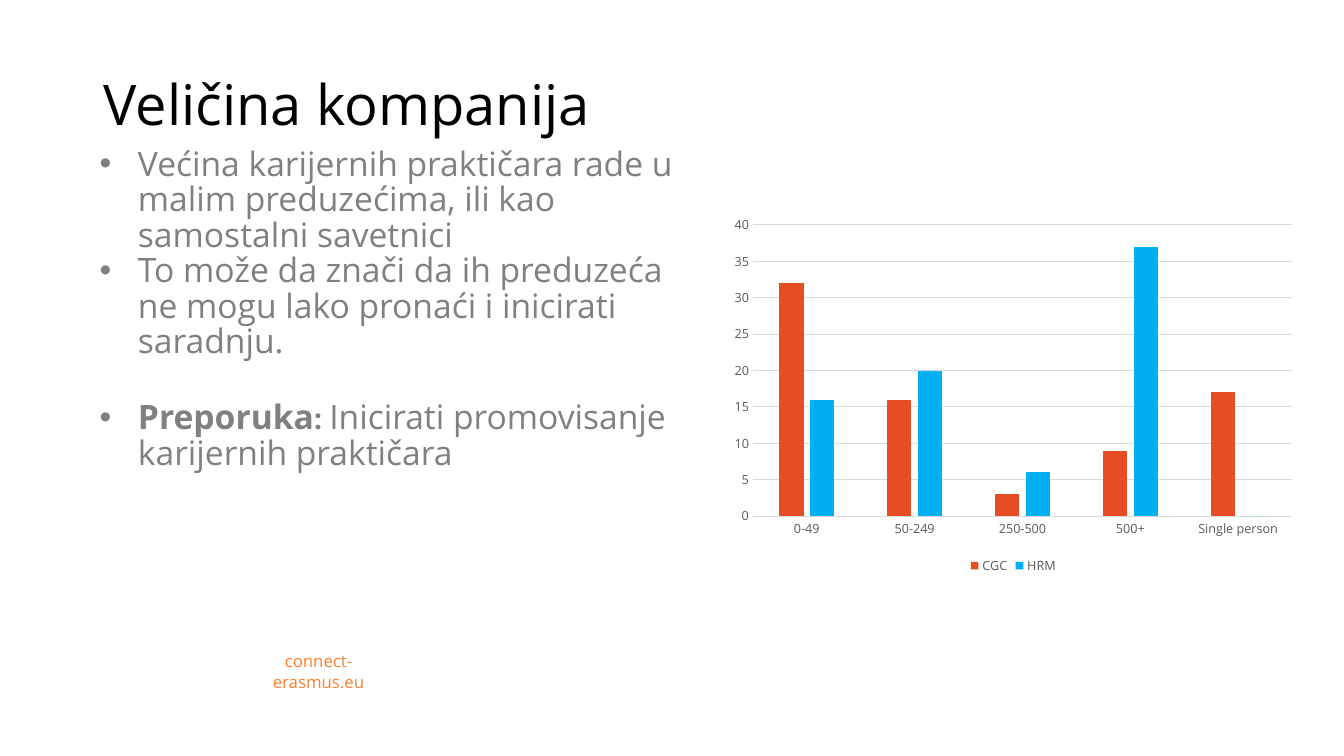
"""Build the company size slide with bullets and a column chart."""
from lxml import etree
from pptx import Presentation
from pptx.chart.data import CategoryChartData
from pptx.dml.color import RGBColor
from pptx.enum.chart import XL_CHART_TYPE, XL_LEGEND_POSITION, XL_TICK_MARK
from pptx.enum.text import MSO_ANCHOR, PP_ALIGN
from pptx.oxml.ns import qn
from pptx.util import Inches, Pt

COLUMNS = XL_CHART_TYPE.COLUMN_CLUSTERED
BOTTOM_LEGEND = XL_LEGEND_POSITION.BOTTOM
NO_TICK = XL_TICK_MARK.NONE
TOP, MIDDLE, BOTTOM = MSO_ANCHOR.TOP, MSO_ANCHOR.MIDDLE, MSO_ANCHOR.BOTTOM
LEFT, CENTER = PP_ALIGN.LEFT, PP_ALIGN.CENTER
FONT = "Open Sans"
GREY, LABEL, RULE = "808080", "595959", "D9D9D9"


def rgb(value):
    return RGBColor.from_string(value)


def style(font, size, color, bold=False):
    for name, value in {"name": FONT, "size": Pt(size), "bold": bold}.items():
        setattr(font, name, value)
    font.color.rgb = rgb(color)


prs = Presentation()
prs.slide_width, prs.slide_height = Inches(13.33), Inches(7.5)
s = prs.slides.add_slide(prs.slide_layouts[5])

title = s.shapes.title
body = s.shapes.add_textbox(0, 0, 0, 0)
footer = s.shapes.add_textbox(0, 0, 0, 0)

boxes = [
    (title, (0.93, 0.67, 8.32, 0.75), BOTTOM, LEFT, 0.9,
     [[("Veličina kompanija", 40, "000000", False)]]),
    (body, (0.89, 1.42, 5.93, 4.83), TOP, LEFT, 0.88, [
        [("Većina karijernih praktičara rade u malim preduzećima, "
          "ili kao samostalni savetnici", 24, GREY, False)],
        [("To može da znači da ih preduzeća ne mogu lako pronaći "
          "i inicirati saradnju.", 24, GREY, False)],
        [("Preporuka", 24, GREY, True), (": ", 20, GREY, True),
         ("Inicirati promovisanje karijernih praktičara", 24, GREY, False)]]),
    (footer, (2.28, 6.51, 1.76, 0.3), MIDDLE, CENTER, 1.0,
     [[("connect-erasmus.eu", 12, "FF7F2A", False)]]),
]
for sp, place, anchor, align, spacing, paragraphs in boxes:
    sp.left, sp.top, sp.width, sp.height = map(Inches, place)
    tf = sp.text_frame
    tf.word_wrap, tf.vertical_anchor = True, anchor
    for i, runs in enumerate(paragraphs):
        p = tf.add_paragraph() if i else tf.paragraphs[0]
        p.alignment, p.line_spacing = align, spacing
        for text, size, color, bold in runs:
            r = p.add_run()
            r.text = text
            style(r.font, size, color, bold)

for p in body.text_frame.paragraphs:
    pPr = p._p.get_or_add_pPr()
    pPr.set("marL", str(Inches(0.38)))
    pPr.set("indent", str(Inches(-0.38)))
    etree.SubElement(pPr, qn("a:buFont")).set("typeface", "Arial")
    etree.SubElement(pPr, qn("a:buChar")).set("char", "•")
p.space_before = Pt(28.8)

data = CategoryChartData()
data.categories = ["0-49", "50-249", "250-500", "500+", "Single person"]
data.add_series("CGC", (32, 16, 3, 9, 17))
data.add_series("HRM", (16, 20, 6, 37, 0))
chart_place = map(Inches, (7.17, 2.07, 5.76, 3.67))
chart = s.shapes.add_chart(COLUMNS, *chart_place, data).chart
style(chart.font, 10, "000000")
chart.has_title = False
chart.has_legend = True
chart.legend.position = BOTTOM_LEGEND
chart.legend.include_in_layout = False
style(chart.legend.font, 9, LABEL)

plot = chart.plots[0]
for name, value in {"gap_width": 219, "overlap": -27,
                    "vary_by_categories": False}.items():
    setattr(plot, name, value)
for series, color in zip(plot.series, ("E84C22", "00B0F0")):
    series.format.fill.solid()
    series.format.fill.fore_color.rgb = rgb(color)

cat_axis, val_axis = chart.category_axis, chart.value_axis
for axis in (cat_axis, val_axis):
    axis.major_tick_mark = axis.minor_tick_mark = NO_TICK
    style(axis.tick_labels.font, 9, LABEL)
for name, value in {"minimum_scale": 0, "maximum_scale": 40,
                    "major_unit": 5, "has_major_gridlines": True}.items():
    setattr(val_axis, name, value)
val_axis.format.line.fill.background()
for line in (cat_axis.format.line, val_axis.major_gridlines.format.line):
    line.color.rgb = rgb(RULE)
    line.width = Pt(0.75)

prs.save("out.pptx")
